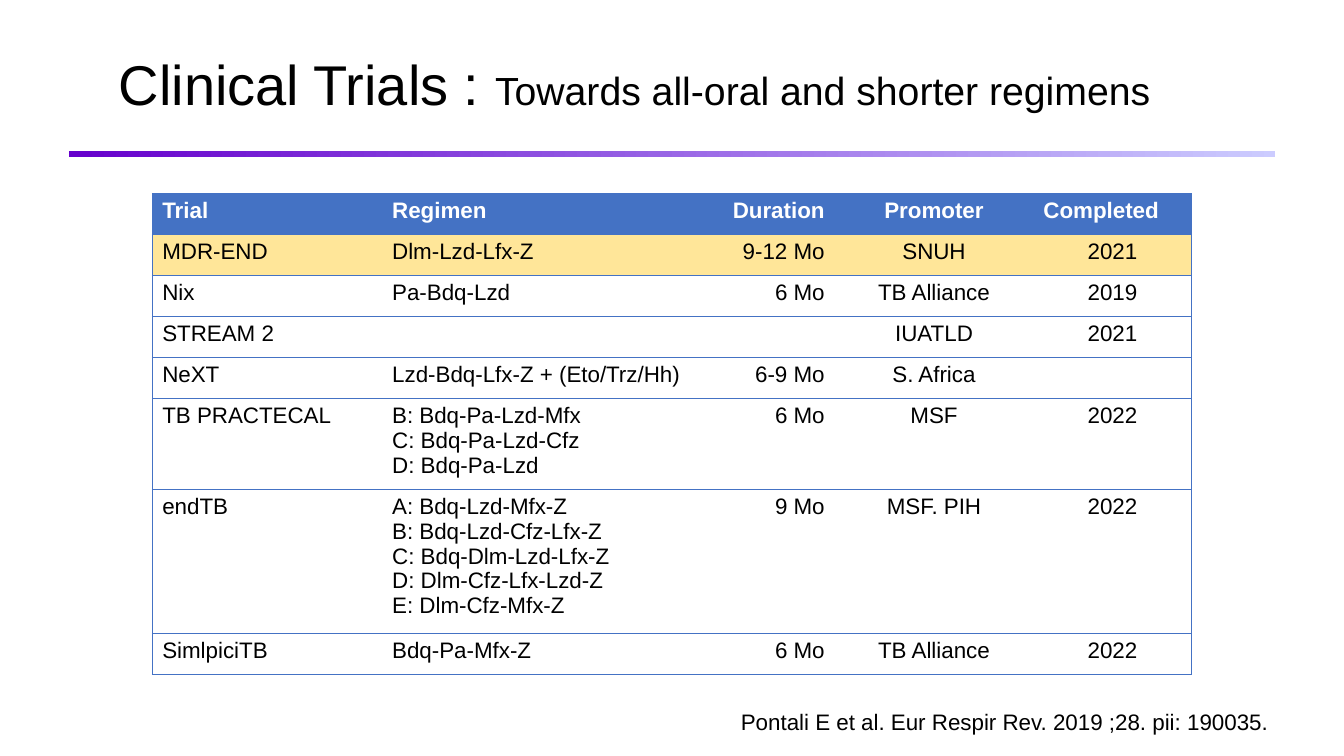
import pptx
import pptx.dml.color
import pptx.enum.shapes
import pptx.enum.text
import pptx.oxml.ns
import pptx.util
from lxml import etree

Inches = pptx.util.Inches
Pt = pptx.util.Pt
RGBColor = pptx.dml.color.RGBColor
Align = pptx.enum.text.PP_ALIGN
qn = pptx.oxml.ns.qn

TITLE = [("Clinical Trials : ", 40), ("Towards all-oral and shorter regimens", 28)]
CITATION = [("Pontali E et al. Eur Respir Rev. 2019 ;28. pii: 190035.", 16)]
TRIALS = [
    ("Trial", "Regimen", "Duration", "Promoter", "Completed"),
    ("MDR-END", "Dlm-Lzd-Lfx-Z", "9-12 Mo", "SNUH", "2021"),
    ("Nix", "Pa-Bdq-Lzd", "6 Mo", "TB Alliance", "2019"),
    ("STREAM 2", "", "", "IUATLD", "2021"),
    ("NeXT", "Lzd-Bdq-Lfx-Z + (Eto/Trz/Hh)", "6-9 Mo", "S. Africa", ""),
    ("TB PRACTECAL", "B: Bdq-Pa-Lzd-Mfx\nC: Bdq-Pa-Lzd-Cfz\nD: Bdq-Pa-Lzd", "6 Mo", "MSF", "2022"),
    ("endTB",
     "A: Bdq-Lzd-Mfx-Z\nB: Bdq-Lzd-Cfz-Lfx-Z\nC: Bdq-Dlm-Lzd-Lfx-Z\nD: Dlm-Cfz-Lfx-Lzd-Z\nE: Dlm-Cfz-Mfx-Z",
     "9 Mo", "MSF. PIH", "2022"),
    ("SimlpiciTB", "Bdq-Pa-Mfx-Z", "6 Mo", "TB Alliance", "2022"),
]
COLUMN_WIDTHS = [2.28, 3.22, 1.27, 1.97, 1.57]
COLUMN_ALIGNS = [Align.LEFT, Align.LEFT, Align.RIGHT, Align.CENTER, Align.CENTER]
TALL_ROWS = {5: 0.9, 6: 1.43}
TABLE_HEIGHT = 4.77
HIGHLIGHT_ROW = 1
NO_STYLE = "{2D5ABB26-0587-4C30-8999-92F81FD0307C}"

BLACK = RGBColor(0x00, 0x00, 0x00)
WHITE = RGBColor(0xFF, 0xFF, 0xFF)
BLUE = RGBColor(0x44, 0x72, 0xC4)
YELLOW = RGBColor(0xFF, 0xE6, 0x99)
PURPLE = RGBColor(0x66, 0x00, 0xCC)
LAVENDER = RGBColor(0xCC, 0xCC, 0xFF)


def add_span(para, text, size, color=BLACK, bold=False):
    span = para.add_run()
    span.text = text
    span.font.name = "Arial"
    span.font.size = Pt(size)
    span.font.bold = bold
    span.font.color.rgb = color


def add_text(page, spans, left, top, width, height):
    box = page.shapes.add_textbox(Inches(left), Inches(top), Inches(width), Inches(height))
    for text, size in spans:
        add_span(box.text_frame.paragraphs[0], text, size)
    return box.text_frame


def add_border(cell, sides):
    properties = cell._tc.get_or_add_tcPr()
    for position, side in enumerate(sides):
        line = etree.Element(qn("a:ln" + side), w=str(Pt(0.5)))
        fill = etree.SubElement(line, qn("a:solidFill"))
        etree.SubElement(fill, qn("a:srgbClr"), val=str(BLUE))
        properties.insert(position, line)


def add_rule(page):
    rule = page.shapes.add_shape(pptx.enum.shapes.MSO_SHAPE.RECTANGLE,
                                 Inches(0.68), Inches(1.5), Inches(11.97), Inches(0.06))
    rule.shadow.inherit = False
    rule.line.fill.background()
    rule.fill.gradient()
    rule.fill.gradient_angle = 0
    for stop, color, place in zip(rule.fill.gradient_stops, (PURPLE, LAVENDER), (0, 1)):
        stop.color.rgb = color
        stop.position = place


def fill_cell(cell, text, row, column):
    header = row == 0
    if header or row == HIGHLIGHT_ROW:
        cell.fill.solid()
        cell.fill.fore_color.rgb = BLUE if header else YELLOW
    else:
        cell.fill.background()
    last = len(COLUMN_WIDTHS) - 1
    sides = (["L"] if column == 0 else []) + (["R"] if column == last else []) + ["T", "B"]
    add_border(cell, sides)
    for index, line in enumerate(text.split("\n")):
        frame = cell.text_frame
        para = frame.paragraphs[0] if index == 0 else frame.add_paragraph()
        para.alignment = Align.LEFT if header and column == last else COLUMN_ALIGNS[column]
        if line:
            add_span(para, line, 16, WHITE if header else BLACK, header)
        else:
            para.font.size = Pt(16)


def add_trials(page):
    table = page.shapes.add_table(len(TRIALS), len(COLUMN_WIDTHS), Inches(1.51), Inches(1.92),
                                  Inches(sum(COLUMN_WIDTHS)), Inches(TABLE_HEIGHT)).table
    table._tbl.tblPr.find(qn("a:tableStyleId")).text = NO_STYLE
    table.horz_banding = False
    for column, width in zip(table.columns, COLUMN_WIDTHS):
        column.width = Inches(width)
    plain_height = (TABLE_HEIGHT - sum(TALL_ROWS.values())) / (len(TRIALS) - len(TALL_ROWS))
    for row, texts in enumerate(TRIALS):
        table.rows[row].height = Inches(TALL_ROWS.get(row, plain_height))
        for column, text in enumerate(texts):
            fill_cell(table.cell(row, column), text, row, column)


def main():
    deck = pptx.Presentation()
    deck.slide_width, deck.slide_height = Inches(13.33), Inches(7.5)
    page = deck.slides.add_slide(deck.slide_layouts[6])
    title = add_text(page, TITLE, 1.08, 0.33, 11.42, 1.08)
    title.word_wrap = True
    title.vertical_anchor = pptx.enum.text.MSO_ANCHOR.MIDDLE
    title.paragraphs[0].line_spacing = 0.9
    add_rule(page)
    add_trials(page)
    citation = add_text(page, CITATION, 7.25, 6.98, 5.56, 0.37)
    citation.word_wrap = False
    citation.auto_size = pptx.enum.text.MSO_AUTO_SIZE.SHAPE_TO_FIT_TEXT
    deck.save("out.pptx")


if __name__ == "__main__":
    main()
